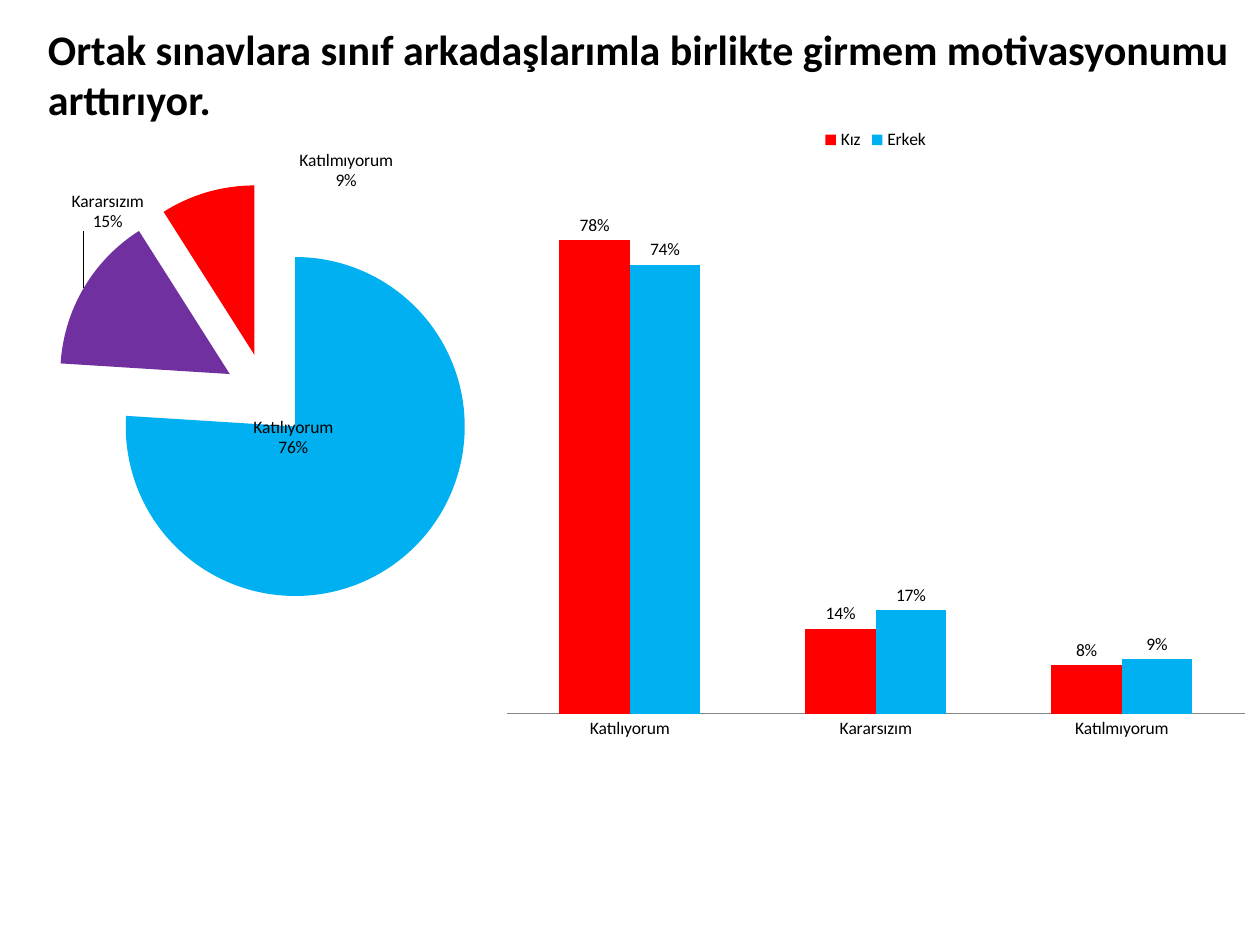
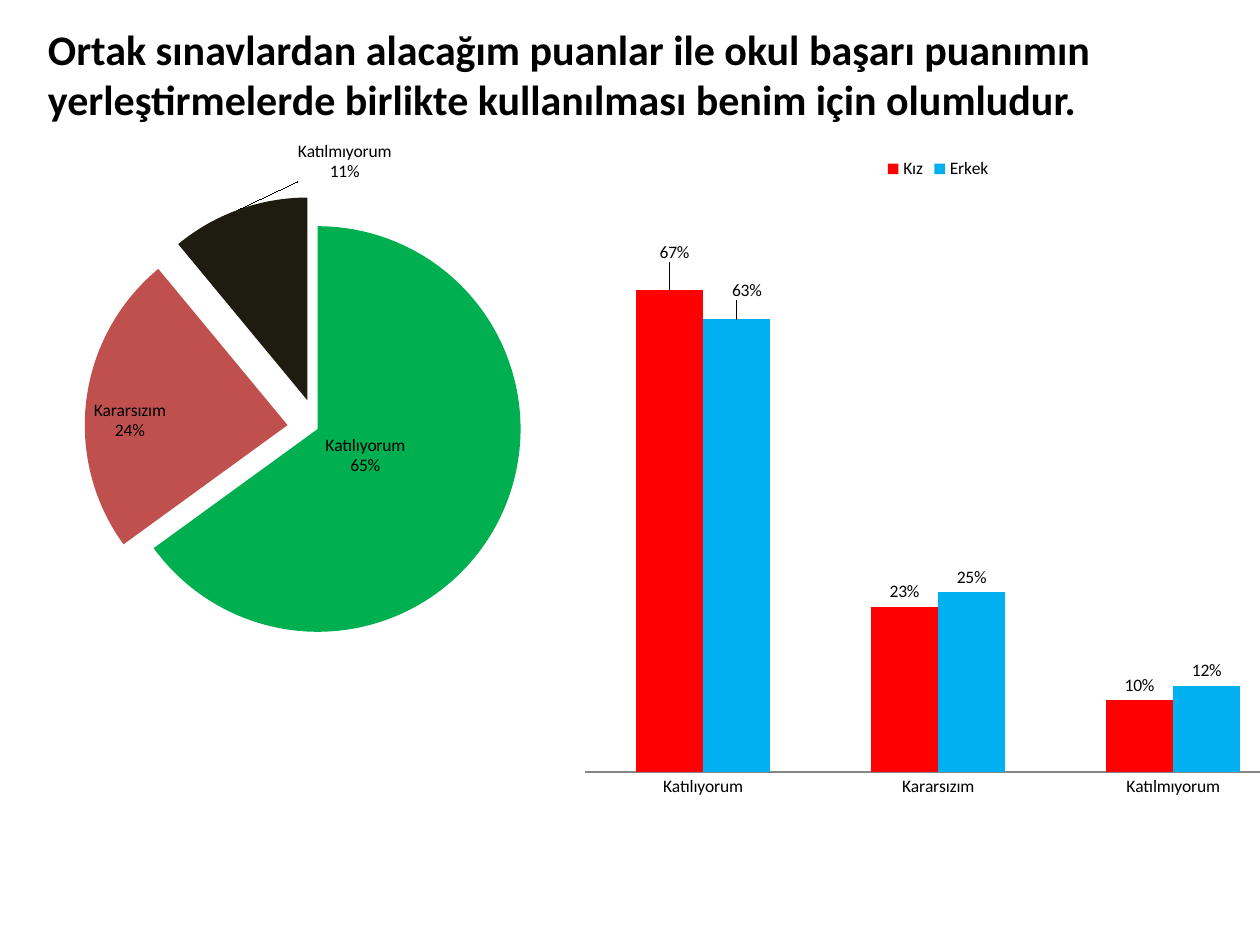
from dataclasses import dataclass

from pptx import Presentation
from pptx.chart.data import CategoryChartData
from pptx.dml.color import RGBColor
from pptx.enum.chart import XL_CHART_TYPE, XL_LABEL_POSITION, XL_LEGEND_POSITION, XL_TICK_LABEL_POSITION, XL_TICK_MARK
from pptx.enum.text import MSO_ANCHOR, MSO_AUTO_SIZE, PP_ALIGN
from pptx.oxml import parse_xml
from pptx.oxml.ns import nsdecls, qn
from pptx.util import Inches, Pt


@dataclass(frozen=True)
class Theme:
    font: str = "Calibri"
    title_size: int = 24
    chart_size: int = 10
    text: str = "000000"
    axis: str = "868686"
    girls: str = "FF0000"
    boys: str = "00B0F0"


theme = Theme()

# Deck and a grid of 10 columns by 7.5 rows
deck = Presentation()
deck.slide_width, deck.slide_height = Inches(10), Inches(7.5)
COLUMN, ROW = deck.slide_width / 10, deck.slide_height / 7.5
TITLE_AREA = (0.28, 0.13, 10, 0.91)
ANSWERS = ("Katılıyorum", "Kararsızım", "Katılmıyorum")

# Label shifts are percentages of the chart's width and height, keyed by point
questions = [
    {
        "title": "Ortak sınavlara sınıf arkadaşlarımla birlikte girmem motivasyonumu arttırıyor.",
        "pie_area": (-0.83, 0.92, 5.75, 4.09),
        "pie_plot": {"x": 6.5, "y": 21.4, "w": 89.4, "h": 65.8},
        "shares": (76, 15, 9),
        "slice_colors": ("00B0F0", "7030A0", "FF0000"),
        "explosions": (25, 25, 25),
        "pie_shifts": {0: (-8.3, -9.8), 1: (-6.8, -23.1), 2: (15.9, -20)},
        "column_area": (3.9, 0.92, 6.1, 5.04),
        "column_top": 0.9,
        "girls": (0.78, 0.14, 0.08),
        "boys": (0.74, 0.17, 0.09),
        "column_shifts": ({}, {}),
    },
    {
        "title": "Ortak sınavlardan alacağım puanlar ile okul başarı puanımın "
                 "yerleştirmelerde birlikte kullanılması benim için olumludur.",
        "pie_area": (-0.59, 0.92, 5.67, 4.49),
        "pie_plot": {"x": 9.8, "y": 19.5, "w": 90.2, "h": 71.7},
        "shares": (65, 24, 11),
        "slice_colors": ("00B050", "C0504D", "1E1C11"),
        "explosions": (0, 15, 15),
        "pie_shifts": {0: (-6, -3.4), 2: (10, -25.3)},
        "column_area": (4.53, 1.15, 5.83, 5.28),
        "column_top": 0.8,
        "girls": (0.67, 0.23, 0.1),
        "boys": (0.63, 0.25, 0.12),
        "column_shifts": ({0: (0.7, -3.5)}, {0: (1.4, -2.1)}),
    },
]


def add_chart(page, kind, area, series_values, number_format):
    """Place a chart on the grid and give it the shared font."""
    data = CategoryChartData(number_format=number_format)
    data.categories = ANSWERS
    for name, values in series_values.items():
        data.add_series(name, values)
    left, top, width, height = area
    frame = page.shapes.add_chart(kind, int(left * COLUMN), int(top * ROW),
                                  int(width * COLUMN), int(height * ROW), data)
    chart = frame.chart
    chart.has_title = False
    chart.font.name, chart.font.size = theme.font, Pt(theme.chart_size)
    chart.font.color.rgb = RGBColor.from_string(theme.text)
    return chart


def label_series(series, settings, shifts, position):
    """Show the labels of a series and shift some of them."""
    labels = series.data_labels
    settings = {"number_format": "0%", "number_format_is_linked": False, **settings}
    for name, value in settings.items():
        setattr(labels, name, value)
    is_pie = labels.show_percentage
    flags = {"LegendKey": 0, "Val": int(not is_pie), "CatName": int(is_pie),
             "SerName": 0, "Percent": int(is_pie), "BubbleSize": 0}
    flag_xml = "".join(f'<c:show{name} val="{flag}"/>' for name, flag in flags.items())
    separator = "<c:separator>\n</c:separator>" if is_pie else ""
    label_list = series._element.find(qn("c:dLbls"))
    for place, (point, (x, y)) in enumerate(shifts.items()):
        label_list.insert(place, parse_xml(
            f'<c:dLbl {nsdecls("c")}><c:idx val="{point}"/><c:layout><c:manualLayout>'
            f'<c:x val="{x / 100:.3f}"/><c:y val="{y / 100:.3f}"/></c:manualLayout></c:layout>'
            f'<c:numFmt formatCode="0%" sourceLinked="0"/><c:dLblPos val="{position}"/>'
            f'{flag_xml}{separator}</c:dLbl>'))
    if is_pie:
        label_list.find(qn("c:showBubbleSize")).addnext(
            parse_xml(f'<c:separator {nsdecls("c")}>\n</c:separator>'))


for question in questions:
    page = deck.slides.add_slide(deck.slide_layouts[5])

    # Title
    title = page.shapes.title
    left, top, width, height = TITLE_AREA
    title.left, title.top = int(left * COLUMN), int(top * ROW)
    title.width, title.height = int(width * COLUMN), int(height * ROW)
    title_frame = title.text_frame
    title_frame.text = question["title"]
    title_format = {"word_wrap": True, "vertical_anchor": MSO_ANCHOR.MIDDLE,
                    "auto_size": MSO_AUTO_SIZE.SHAPE_TO_FIT_TEXT}
    for name, value in title_format.items():
        setattr(title_frame, name, value)
    para = title_frame.paragraphs[0]
    para.alignment = PP_ALIGN.LEFT
    span = para.runs[0]
    for name, value in {"name": theme.font, "size": Pt(theme.title_size), "bold": True}.items():
        setattr(span.font, name, value)
    span.font.color.rgb = RGBColor.from_string(theme.text)

    # Pie of all answers
    pie = add_chart(page, XL_CHART_TYPE.PIE, question["pie_area"],
                    {"Series 1": question["shares"]}, "General")
    pie.has_legend = False
    pie.plots[0].vary_by_categories = True
    answers = pie.plots[0].series[0]
    for index, (color, explosion) in enumerate(zip(question["slice_colors"], question["explosions"])):
        fill = answers.points[index].format.fill
        fill.solid()
        fill.fore_color.rgb = RGBColor.from_string(color)
        slice_xml = answers._element.findall(qn("c:dPt"))[index]
        slice_xml.find(qn("c:spPr")).addprevious(
            parse_xml(f'<c:explosion {nsdecls("c")} val="{explosion}"/>'))
    label_series(answers, {"show_value": False, "show_percentage": True, "show_category_name": True,
                           "position": XL_LABEL_POSITION.INSIDE_END},
                 question["pie_shifts"], "ctr")

    # Fixed plot area of the pie
    plot_area = pie._chartSpace.chart.plotArea
    for layout in plot_area.findall(qn("c:layout")):
        plot_area.remove(layout)
    sizes = "".join(f'<c:{side} val="{share / 100:.3f}"/>' for side, share in question["pie_plot"].items())
    plot_area.insert(0, parse_xml(
        f'<c:layout {nsdecls("c")}><c:manualLayout><c:layoutTarget val="inner"/>'
        f'<c:xMode val="edge"/><c:yMode val="edge"/>{sizes}</c:manualLayout></c:layout>'))

    # Columns by gender
    columns = add_chart(page, XL_CHART_TYPE.COLUMN_CLUSTERED, question["column_area"],
                        {"Kız": question["girls"], "Erkek": question["boys"]}, "0%")
    columns.has_legend = True
    columns.legend.position = XL_LEGEND_POSITION.TOP
    columns.legend.include_in_layout = False
    plot = columns.plots[0]
    plot.gap_width, plot.overlap, plot.vary_by_categories = 150, 0, False
    for series, color, shifts in zip(plot.series, (theme.girls, theme.boys), question["column_shifts"]):
        series.format.fill.solid()
        series.format.fill.fore_color.rgb = RGBColor.from_string(color)
        label_series(series, {"show_value": True, "position": XL_LABEL_POSITION.OUTSIDE_END},
                     shifts, "outEnd")

    # Axes
    value_axis, category_axis = columns.value_axis, columns.category_axis
    value_format = {"visible": False, "has_major_gridlines": False,
                    "minimum_scale": 0, "maximum_scale": question["column_top"]}
    category_format = {"major_tick_mark": XL_TICK_MARK.NONE, "minor_tick_mark": XL_TICK_MARK.NONE,
                       "tick_label_position": XL_TICK_LABEL_POSITION.NEXT_TO_AXIS}
    for axis, settings in ((value_axis, value_format), (category_axis, category_format)):
        for name, value in settings.items():
            setattr(axis, name, value)
    category_axis.format.line.color.rgb = RGBColor.from_string(theme.axis)
    category_axis.format.line.width = Pt(0.75)

deck.save("out.pptx")
